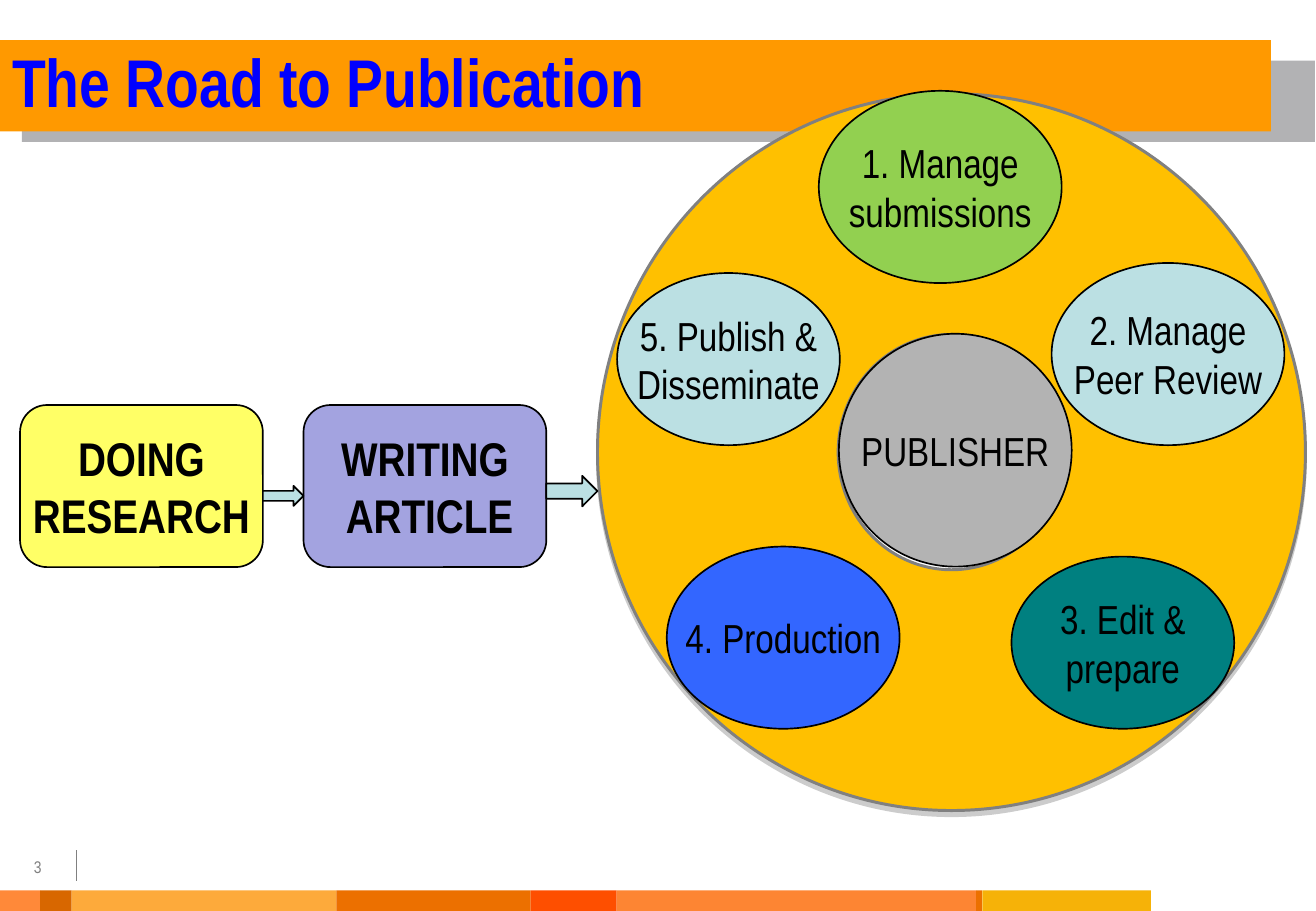
from dataclasses import dataclass
from itertools import pairwise
from typing import Any, Optional

from lxml import etree
from pptx import Presentation
from pptx.dml.color import RGBColor
from pptx.enum.shapes import MSO_CONNECTOR as Connector, MSO_SHAPE as Kind
from pptx.enum.text import MSO_ANCHOR as Anchor, MSO_AUTO_SIZE as AutoSize, PP_ALIGN as Align
from pptx.oxml import parse_xml
from pptx.oxml.ns import nsdecls, qn
from pptx.util import Cm, Pt

FONT = "Arial Narrow"
BLACK = RGBColor(0x00, 0x00, 0x00)
WHITE = RGBColor(0xFF, 0xFF, 0xFF)
GREY = RGBColor(0x80, 0x80, 0x80)
BAND_GREY = RGBColor(0xB2, 0xB2, 0xB4)
HUB_GREY = RGBColor(0xB3, 0xB3, 0xB3)
ORANGE = RGBColor(0xFF, 0x99, 0x00)
TITLE_BLUE = RGBColor(0x00, 0x00, 0xFF)
GOLD = RGBColor(0xFF, 0xC0, 0x00)
GREEN = RGBColor(0x92, 0xD0, 0x50)
PALE_BLUE = RGBColor(0xBB, 0xE0, 0xE3)
TEAL = RGBColor(0x00, 0x80, 0x80)
BLUE = RGBColor(0x33, 0x66, 0xFF)
YELLOW = RGBColor(0xFF, 0xFF, 0x66)
LILAC = RGBColor(0xA3, 0xA3, 0xE0)
CORAL = RGBColor(0xFF, 0x89, 0x39)
RUST = RGBColor(0xD8, 0x67, 0x00)
APRICOT = RGBColor(0xFD, 0xAA, 0x3B)
PUMPKIN = RGBColor(0xEC, 0x70, 0x00)
RED_ORANGE = RGBColor(0xFE, 0x4F, 0x00)
SALMON = RGBColor(0xFD, 0x85, 0x33)
AMBER = RGBColor(0xF6, 0xB2, 0x08)


@dataclass
class Block:
    kind: Kind
    left: float
    top: float
    width: float
    height: float
    fill: RGBColor
    line: Optional[RGBColor] = BLACK
    weight: float = 1
    paragraphs: tuple[str, ...] = ()
    size: int = 24
    bold: bool = False


TITLE_BANDS = [
    Block(Kind.RECTANGLE, 0.46, 1.27, 27.05, 1.7, BAND_GREY, None),
    Block(Kind.RECTANGLE, 0, 0.84, 26.59, 1.91, ORANGE, None),
]
FOOTER_EDGES = [0, 0.84, 1.5, 7.04, 11.1, 12.9, 20.42, 20.55, 24.08]
FOOTER_COLOURS = [CORAL, RUST, APRICOT, PUMPKIN, RED_ORANGE, SALMON, PUMPKIN, AMBER]
PUBLISHER_RING = Block(Kind.DONUT, 12.5, 1.96, 14.81, 14.99, GOLD, GREY, 1.75)
STAGES = [
    Block(Kind.OVAL, 17.13, 1.9, 5.08, 4.02, GREEN, paragraphs=("1. Manage", "submissions")),
    Block(Kind.OVAL, 22, 5.5, 4.87, 3.81, PALE_BLUE, paragraphs=("2. Manage\vPeer Review",)),
    Block(Kind.OVAL, 17.55, 6.98, 4.87, 4.87, HUB_GREY, paragraphs=("PUBLISHER",)),
    Block(Kind.OVAL, 21.16, 11.64, 4.66, 3.6, TEAL, paragraphs=("3. Edit &\vprepare",)),
    Block(Kind.OVAL, 13.95, 11.43, 4.87, 3.81, BLUE, paragraphs=("4. Production",)),
    Block(Kind.OVAL, 12.91, 5.71, 4.66, 3.6, PALE_BLUE, paragraphs=("5. Publish &\vDisseminate",)),
]
AUTHOR_STEPS = [
    Block(Kind.ROUNDED_RECTANGLE, 0.42, 8.47, 5.08, 3.39, YELLOW,
          paragraphs=("DOING", "RESEARCH"), size=28, bold=True),
    Block(Kind.ROUNDED_RECTANGLE, 6.35, 8.47, 5.08, 3.39, LILAC,
          paragraphs=("WRITING", " ARTICLE"), size=28, bold=True),
]
ARROWS = [
    Block(Kind.RIGHT_ARROW, 5.5, 10.16, 0.85, 0.42, PALE_BLUE),
    Block(Kind.RIGHT_ARROW, 11.43, 9.95, 1.07, 0.64, PALE_BLUE),
]


def apply(target: Any, values: dict[str, Any]) -> None:
    for name, value in values.items():
        setattr(target, name, value)


def write(frame: Any, paragraphs: tuple[str, ...], size: int, colour: RGBColor,
          bold: bool, align: Align, anchor: Anchor, wrap: bool) -> None:
    apply(frame, {"auto_size": AutoSize.NONE, "word_wrap": wrap, "vertical_anchor": anchor})
    frame.text = "\n".join(paragraphs)
    for para in frame.paragraphs:
        para.alignment = align
        for span in para.runs:
            apply(span.font, {"name": FONT, "size": Pt(size), "bold": bold})
            span.font.color.rgb = colour


def draw(page: Any, block: Block) -> Any:
    box = page.shapes.add_shape(block.kind, Cm(block.left), Cm(block.top),
                                Cm(block.width), Cm(block.height))
    box.shadow.inherit = False
    box.fill.solid()
    box.fill.fore_color.rgb = block.fill
    if block.line is None:
        box.line.fill.background()
    else:
        box.line.color.rgb = block.line
        box.line.width = Pt(block.weight)
    if block.paragraphs:
        write(box.text_frame, block.paragraphs, block.size, BLACK, block.bold,
              Align.CENTER, Anchor.MIDDLE, False)
    return box


def draw_footer(page: Any) -> None:
    for (start, end), colour in zip(pairwise(FOOTER_EDGES), FOOTER_COLOURS):
        draw(page, Block(Kind.RECTANGLE, start, 18.62, end - start, 0.43, colour, None))
    divider = page.shapes.add_connector(Connector.STRAIGHT, Cm(1.6), Cm(17.78), Cm(1.6), Cm(18.42))
    divider.line.color.rgb = GREY
    divider.line.width = Pt(0.75)
    etree.SubElement(divider.element.spPr, qn("a:effectLst"))
    number = page.shapes.add_textbox(Cm(0.46), Cm(17.78), Cm(1.37), Cm(1.27))
    write(number.text_frame, ("3",), 10, GREY, False, Align.LEFT, Anchor.TOP, True)


def place_title(page: Any) -> None:
    title = page.shapes.title
    apply(title, {"left": Cm(0), "top": Cm(0.84), "width": Cm(13.97), "height": Cm(1.7)})
    write(title.text_frame, ("The Road to Publication",), 40, TITLE_BLUE, True,
          Align.LEFT, Anchor.MIDDLE, True)
    page.shapes.element.append(title.element)


def draw_ring(page: Any) -> None:
    ring = draw(page, PUBLISHER_RING)
    ring.adjustments[0] = 0.34
    effects = ring.element.spPr.find(qn("a:effectLst"))
    effects.append(parse_xml(
        f'<a:outerShdw {nsdecls("a")} blurRad="0" dist="{Pt(3)}" dir="5400000" rotWithShape="0">'
        '<a:srgbClr val="000000"><a:alpha val="20000"/></a:srgbClr></a:outerShdw>'))


def main() -> None:
    deck = Presentation()
    apply(deck, {"slide_width": Cm(27.53), "slide_height": Cm(19.05)})
    page = deck.slides.add_slide(deck.slide_layouts[5])
    page.background.fill.solid()
    page.background.fill.fore_color.rgb = WHITE
    for band in TITLE_BANDS:
        draw(page, band)
    draw_footer(page)
    place_title(page)
    draw_ring(page)
    for block in STAGES + AUTHOR_STEPS + ARROWS:
        draw(page, block)
    deck.save("out.pptx")


if __name__ == "__main__":
    main()
